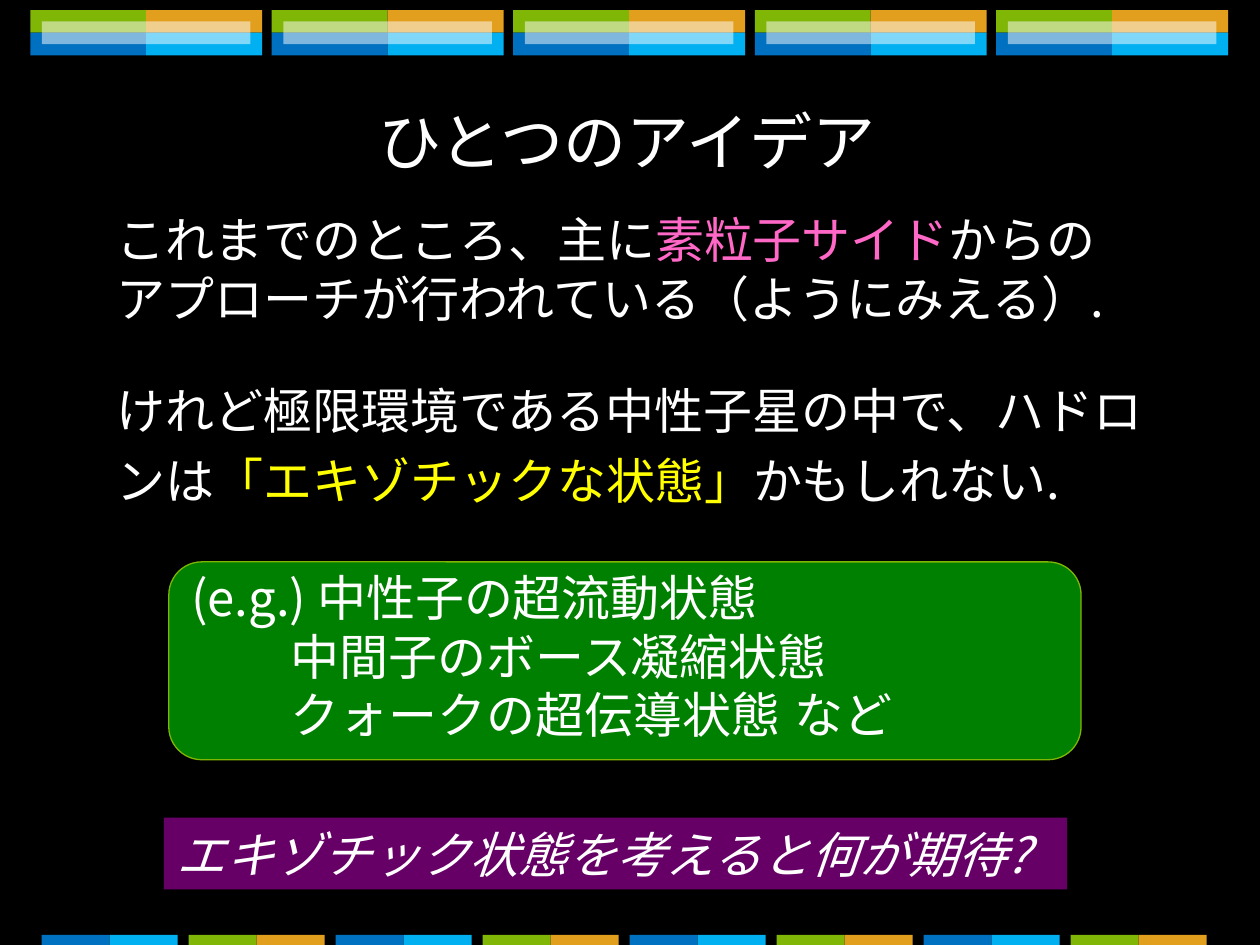
from lxml import etree
from pptx import Presentation
from pptx import util as u
from pptx.dml.color import RGBColor
from pptx.enum import shapes, text
from pptx.oxml.ns import qn

THEME = dict(
    font="Noto Sans CJK JP", title=36, body=28, line=33.4, loose=40,
    black="000000", white="FFFFFF", pink="FF68C6", yellow="FFFF00",
    green="008000", edge="7FB602", purple="660066",
    lime="80B606", orange="E29F1D", blue="0070C0", sky="00B0F0",
)
W, H = 10, 7.5

prs = Presentation()
prs.slide_width, prs.slide_height = u.Inches(W), u.Inches(H)
s = prs.slides.add_slide(prs.slide_layouts[5])
s.background.fill.solid()
s.background.fill.fore_color.rgb = RGBColor.from_string(THEME["black"])


def add_block(x, y, w, h, color, kind=shapes.MSO_SHAPE.RECTANGLE):
    sp = s.shapes.add_shape(kind, *map(u.Inches, (x, y, w, h)))
    sp.shadow.inherit = False
    sp.fill.solid()
    sp.fill.fore_color.rgb = RGBColor.from_string(THEME[color])
    sp.line.fill.background()
    return sp


def write(p, runs, size="body", line="line", italic=None):
    """Fill a paragraph with (wording, colour) runs on a fixed line pitch."""
    if line:
        p.line_spacing = u.Pt(THEME[line])
    for words, color in runs:
        r = p.add_run()
        r.text = words
        r.font.size = u.Pt(THEME[size])
        r.font.name = THEME["font"]
        r.font.italic = italic
        r.font.color.rgb = RGBColor.from_string(THEME[color])
        ea = etree.SubElement(r.font._element, qn("a:ea"))
        ea.set("typeface", THEME["font"])


# Top band: five tiles of 2 x 2 cells with a translucent bar
cell_w, cell_h, tile_step = 0.92, 0.18, 23 / 12
for i in range(5):
    x, y = 0.24 + i * tile_step, 0.08
    for k, color in enumerate(("lime", "orange", "blue", "sky")):
        add_block(x + k % 2 * cell_w, y + k // 2 * cell_h, cell_w, cell_h, color)
    bar = add_block(x + cell_w / 10, y + cell_h / 2, cell_w * 1.8, cell_h, "white")
    rgb = bar.fill._xPr.find(qn("a:solidFill"))[0]
    etree.SubElement(rgb, qn("a:alpha")).set("val", "50000")

# Bottom band: eight pairs in alternating colours
half_w, pair_step = 0.54, 7 / 6
for i in range(8):
    for k, color in enumerate((("blue", "sky"), ("lime", "orange"))[i % 2]):
        add_block(0.33 + i * pair_step + k * half_w, H - 0.08, half_w, 0.08, color)

# Title
title = s.shapes.title
title.left, title.top, title.width, title.height = map(
    u.Inches, (2.87, 0.76, 4.21, 0.71))
title.text_frame.word_wrap = False
title.text_frame.vertical_anchor = text.MSO_ANCHOR.MIDDLE
write(title.text_frame.paragraphs[0], [("ひとつのアイデア", "white")], "title", None)

# Argument
tf = s.shapes.add_textbox(*map(u.Inches, (0.83, 1.62, 8.43, 2.49))).text_frame
tf.word_wrap = True
write(tf.paragraphs[0], [("これまでのところ、主に", "white"),
                         ("素粒子サイド", "pink"), ("からの", "white")])
write(tf.add_paragraph(), [("アプローチが行われている（ようにみえる）.", "white")])
p = tf.add_paragraph()
p.space_before = u.Pt(24)
write(p, [("けれど極限環境である中性子星の中で、ハドロンは", "white"),
          ("「エキゾチックな状態」", "yellow"), ("かもしれない.", "white")],
      line="loose")

# Examples
panel = add_block(1.34, 4.46, 7.24, 1.57, "green",
                  shapes.MSO_SHAPE.ROUNDED_RECTANGLE)
panel.line.color.rgb = RGBColor.from_string(THEME["edge"])
panel.line.width = u.Pt(0.75)
tf = s.shapes.add_textbox(*map(u.Inches, (1.42, 4.46, 6.88, 1.51))).text_frame
tf.word_wrap = True
indent, tab_at = u.Inches(0.79), u.Inches(5.46)
examples = ("(e.g.) 中性子の超流動状態", "中間子のボース凝縮状態",
            "クォークの超伝導状態\tなど")
for i, words in enumerate(examples):
    p = tf.paragraphs[0] if i == 0 else tf.add_paragraph()
    pPr = p._p.get_or_add_pPr()
    if i:
        pPr.set("marL", str(indent))
        pPr.set("indent", "0")
    if "\t" in words:
        tabs = etree.SubElement(pPr, qn("a:tabLst"))
        etree.SubElement(tabs, qn("a:tab"), pos=str(tab_at), algn="l")
    write(p, [(words, "white")])

# Closing question
ask = add_block(1.3, 6.49, 7.17, 0.57, "purple")
ask.text_frame.word_wrap = True
p = ask.text_frame.paragraphs[0]
p.alignment = text.PP_ALIGN.LEFT
write(p, [("エキゾチック状態を考えると何が期待?", "white")], italic=True)

prs.save("out.pptx")
